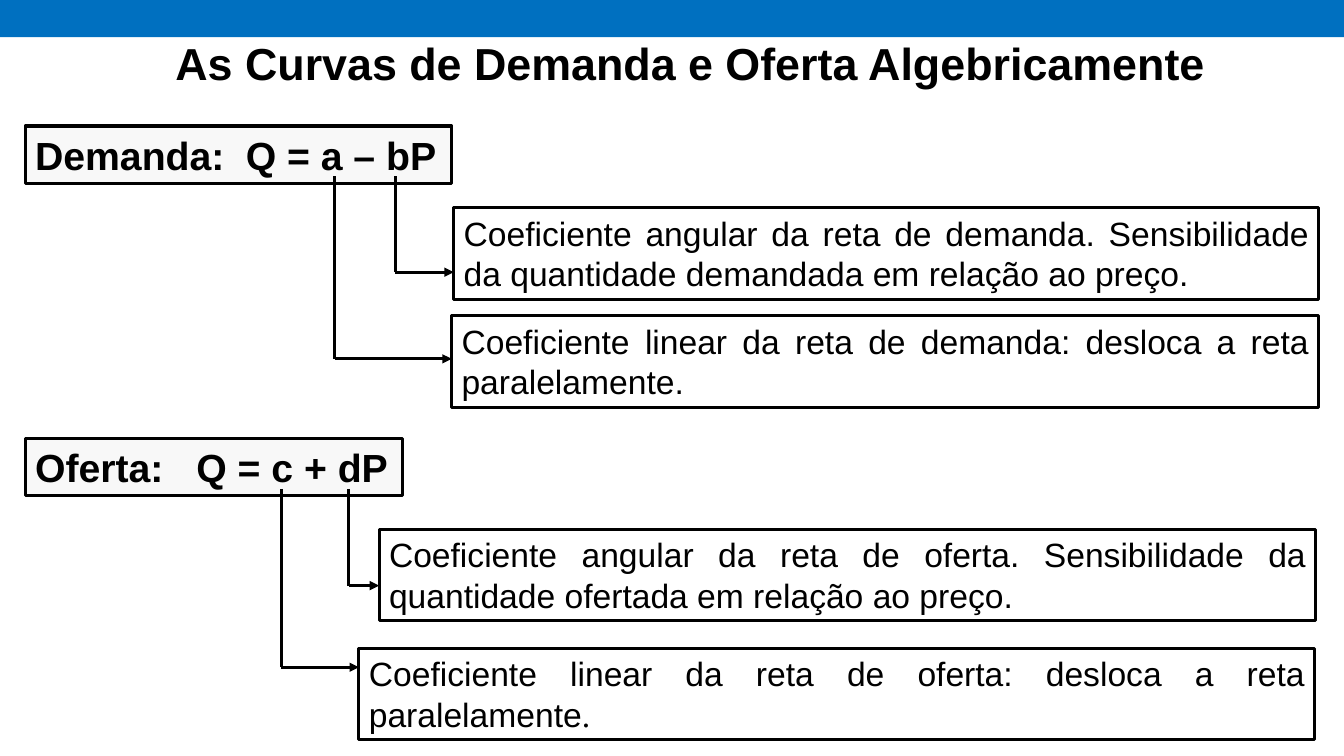
from lxml import etree
from pptx import Presentation
from pptx import util as u
from pptx.dml.color import RGBColor
from pptx.enum import shapes, text
from pptx.oxml import ns

BLACK = RGBColor(0x00, 0x00, 0x00)
BLUE = RGBColor(0x00, 0x70, 0xC0)
PALE = RGBColor(0xF8, 0xF8, 0xF8)
WIDTH, HEIGHT = 13.33, 7.5
LINE_WIDTH = 2.25
FORMULA_HEIGHT, NOTE_HEIGHT = 0.57, 0.91
STEM_TOP = 0.5  # stems start just inside the formula box

# Each note: (left, top, right, stem x, arrow y, runs), relative to its block
DEMAND_NOTES = [
    (4.25, 0.81, 12.83, 3.67, 1.45,
     [("Coeficiente angular da reta de demanda. Sensibilidade da quantidade "
       "demandada em relação ao preço.", "Arial")]),
    (4.23, 1.88, 12.83, 3.07, 2.31,
     [("Coeficiente linear da reta de demanda: desloca a reta paralelamente.",
       "Arial")]),
]
SUPPLY_NOTES = [
    (3.51, 0.9, 12.8, 3.21, 1.46,
     [("Coeficiente angular da reta de oferta. Sensibilidade da quantidade "
       "ofertada em relação ao preço.", "Arial")]),
    (3.31, 2.08, 12.79, 2.54, 2.27,
     [("Coeficiente linear da reta de oferta: desloca a reta paralelamente",
       "Arial"), (".", "Times New Roman")]),
]


def add_run(p, words, size, bold=False, font="Arial"):
    r = p.add_run()
    r.text = words
    r.font.name, r.font.size, r.font.bold = font, u.Pt(size), bold
    r.font.color.rgb = BLACK


def add_box(slide, left, top, width, height, fill=None):
    """Add an outlined rectangle and return its text frame."""
    sp = slide.shapes.add_shape(shapes.MSO_SHAPE.RECTANGLE, u.Inches(left),
                                u.Inches(top), u.Inches(width), u.Inches(height))
    sp.shadow.inherit = False
    if fill is None:
        sp.fill.background()
    else:
        sp.fill.solid()
        sp.fill.fore_color.rgb = fill
    sp.line.color.rgb = BLACK
    sp.line.width = u.Pt(LINE_WIDTH)
    tf = sp.text_frame
    tf.vertical_anchor = text.MSO_ANCHOR.TOP
    return tf


def add_line(slide, start, end, arrow=False):
    line = slide.shapes.add_connector(shapes.MSO_CONNECTOR.STRAIGHT,
                                      *map(u.Inches, start + end))
    line.line.color.rgb = BLACK
    line.line.width = u.Pt(LINE_WIDTH)
    if arrow:
        ln = line.line._get_or_add_ln()
        etree.SubElement(ln, ns.qn("a:tailEnd"), type="triangle")
    etree.SubElement(line._element.spPr, ns.qn("a:effectLst"))


def add_title(slide):
    title = slide.shapes.title
    title.left, title.top = u.Inches(1.12), u.Inches(0.02)
    title.width, title.height = u.Inches(11.46), u.Inches(1.2)
    tf = title.text_frame
    tf.vertical_anchor = text.MSO_ANCHOR.MIDDLE
    p = tf.paragraphs[0]
    p.alignment = text.PP_ALIGN.CENTER
    add_run(p, "As Curvas de Demanda e Oferta Algebricamente", 32, bold=True)


def add_band(slide):
    band = slide.shapes.add_shape(shapes.MSO_SHAPE.RECTANGLE, 0, 0,
                                  u.Inches(WIDTH), u.Inches(0.37))
    band.shadow.inherit = False
    band.fill.solid()
    band.fill.fore_color.rgb = BLUE
    band.line.fill.background()


def add_curve(slide, x, y, width, label, formula, formula_tab, notes):
    """Place a formula and the notes its coefficients point to, from (x, y)."""
    tf = add_box(slide, x, y, width, FORMULA_HEIGHT, PALE)
    tf.word_wrap = False
    p = tf.paragraphs[0]
    p.alignment = text.PP_ALIGN.LEFT
    tabs = etree.SubElement(p._p.get_or_add_pPr(), ns.qn("a:tabLst"))
    etree.SubElement(tabs, ns.qn("a:tab"), pos=str(u.Inches(formula_tab)), algn="l")
    add_run(p, f"{label}\t{formula}", 28, bold=True)

    for left, top, right, stem, arrow_y, runs in notes:
        corner = (x + stem, y + arrow_y)
        add_line(slide, (x + stem, y + STEM_TOP), corner)
        add_line(slide, corner, (x + left, y + arrow_y), arrow=True)
        tf = add_box(slide, x + left, y + top, right - left, NOTE_HEIGHT)
        tf.word_wrap = True
        p = tf.paragraphs[0]
        p.alignment = text.PP_ALIGN.JUSTIFY
        for words, font in runs:
            add_run(p, words, 24, font=font)


def main():
    prs = Presentation()
    prs.slide_width, prs.slide_height = u.Inches(WIDTH), u.Inches(HEIGHT)
    s = prs.slides.add_slide(prs.slide_layouts.get_by_name("Title Only"))
    add_band(s)
    add_title(s)
    add_curve(s, 0.25, 1.25, 4.23, "Demanda:", "Q = a – bP", 2.09, DEMAND_NOTES)
    add_curve(s, 0.25, 4.35, 3.74, "Oferta:", "Q = c + dP", 1.6, SUPPLY_NOTES)
    prs.save("out.pptx")


if __name__ == "__main__":
    main()
